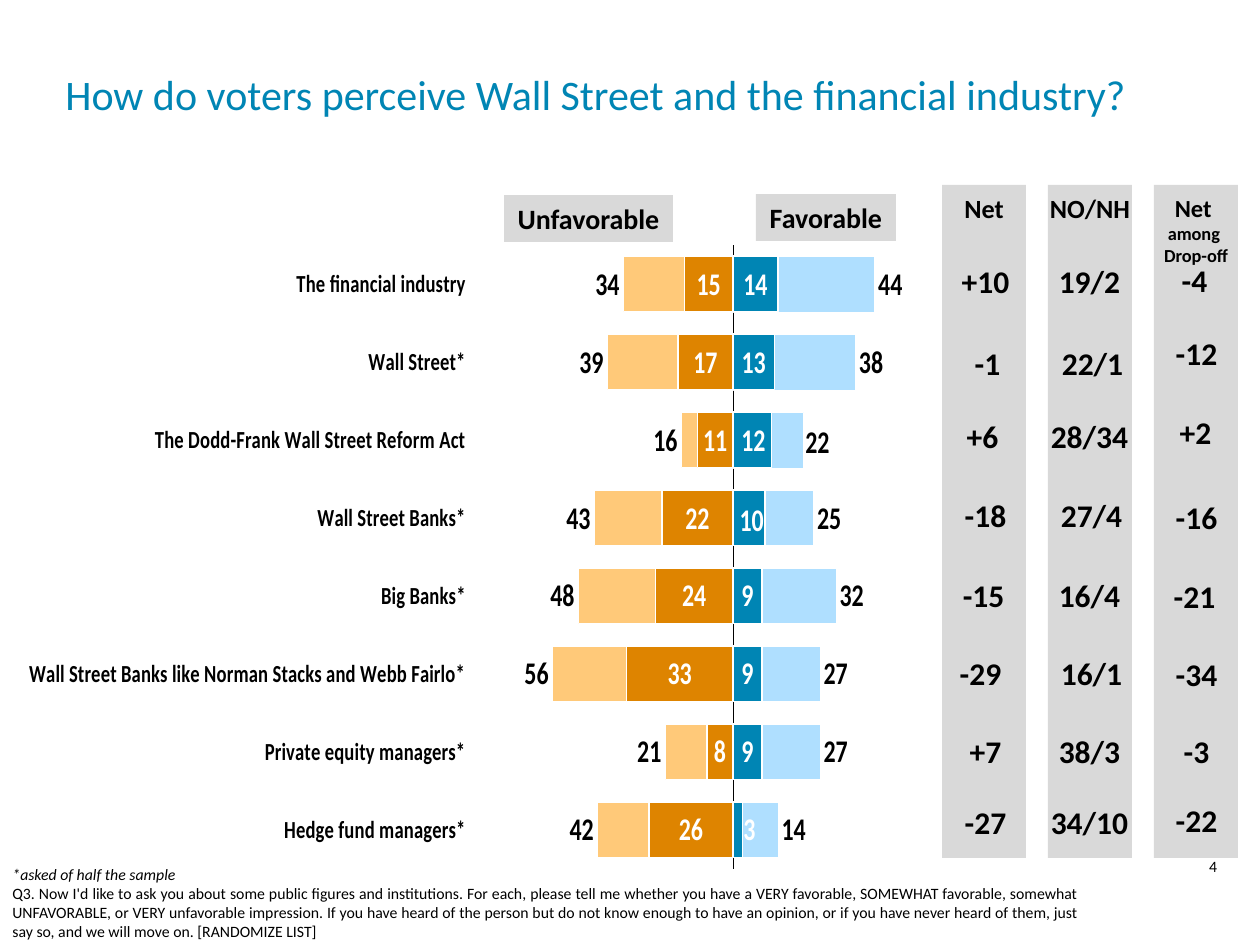
import copy
from dataclasses import dataclass

import pptx
import pptx.chart.data
import pptx.dml.color
import pptx.enum.chart
import pptx.enum.shapes
import pptx.enum.text
import pptx.oxml
import pptx.oxml.ns
import pptx.util

EMU_PER_PX = 914400 / 126
FONT = "Calibri"
BLACK, WHITE, GREY, BLUE = "000000", "FFFFFF", "D9D9D9", "0085B4"
CENTER = pptx.enum.text.PP_ALIGN.CENTER
JUSTIFY = pptx.enum.text.PP_ALIGN.JUSTIFY
FLIP_SIGN = "#,##0_);#,##0"
LABEL_POSITION = pptx.enum.chart.XL_LABEL_POSITION
ROW_TOPS = (262, 344, 417, 496, 576, 654, 732, 803)
DROP_OFF_TOPS = (261, 334, 413, 498, 577, 655, 732, 801)


@dataclass
class Line:
    text: str
    size: float
    bold: bool = False
    italic: bool = False
    color: str = BLACK


@dataclass
class Column:
    left: int
    header: list[Line]
    header_top: int
    values: list[str]
    nudges: tuple[int, ...]
    tops: tuple[int, ...] = ROW_TOPS


@dataclass
class Bars:
    name: str
    values: list[int]
    color: str
    line_width: float
    label_color: str
    label_format: str
    position: object
    label_shifts: dict[int, tuple[float, float]]


CATEGORIES = [
    "The financial industry", "Wall Street*", "The Dodd-Frank Wall Street Reform Act",
    "Wall Street Banks*", "Big Banks*",
    "Wall Street Banks like Norman Stacks and Webb Fairlo*",
    "Private equity managers*", "Hedge fund managers*",
]
OUTSIDE, MIDDLE = LABEL_POSITION.OUTSIDE_END, LABEL_POSITION.CENTER
BARS = [
    Bars("Series 1", [44, 38, 22, 25, 32, 27, 27, 14], "AFDFFF", 0.25, BLACK, "General",
         OUTSIDE, {2: (-0.003, 0.003)}),
    Bars("Series 2", [-34, -39, -16, -43, -48, -56, -21, -42], "FFC979", 1.05, BLACK,
         FLIP_SIGN, OUTSIDE, {}),
    Bars("Series 3", [14, 13, 12, 10, 9, 9, 9, 3], BLUE, 1.05, WHITE, "General",
         MIDDLE, {2: (0.002, 0), 3: (0.004, 0.004), 7: (0.017, 0)}),
    Bars("Series 4", [-15, -17, -11, -22, -24, -33, -8, -26], "DE8400", 1.05, WHITE,
         FLIP_SIGN, MIDDLE, {}),
]
COLUMNS = [
    Column(1048, [Line("NO/NH", 15, True)], 192,
           ["19/2", "22/1", "28/34", "27/4", "16/4", "16/1", "38/3", "34/10"],
           (0, 3, 0, 2, 0, 2, 0, 0)),
    Column(942, [Line("Net", 15, True)], 192,
           ["+10", "-1", "+6", "-18", "-15", "-29", "+7", "-27"],
           (2, 4, -1, 2, 0, -3, 2, 2)),
    Column(1154, [Line("Net ", 14, True), Line("among ", 10.5, True),
                  Line("Drop-off", 10.5, True)], 193,
           ["-4", "-12", "+2", "-16", "-21", "-34", "-3", "-22"],
           (-1, 1, 0, 1, -1, 1, 1, 1), DROP_OFF_TOPS),
]


def px(length: float) -> int:
    return round(length * EMU_PER_PX)


def rgb(color: str) -> pptx.dml.color.RGBColor:
    return pptx.dml.color.RGBColor.from_string(color)


def style_font(font, size: float, color: str, bold: bool = False, italic: bool = False) -> None:
    font.name, font.size = FONT, pptx.util.Pt(size)
    font.bold, font.italic = bold, italic
    font.color.rgb = rgb(color)


def write(shape, lines: list[Line], align, inset: bool = True, wrap: bool = True,
          middle: bool = False) -> None:
    frame = shape.text_frame
    frame.word_wrap = wrap
    anchors = pptx.enum.text.MSO_ANCHOR
    frame.vertical_anchor = anchors.MIDDLE if middle else anchors.TOP
    if not inset:
        frame.margin_left = frame.margin_right = frame.margin_top = frame.margin_bottom = 0
    for index, line in enumerate(lines):
        paragraph = frame.add_paragraph() if index else frame.paragraphs[0]
        paragraph.alignment = align
        run = paragraph.add_run()
        run.text = line.text
        style_font(run.font, line.size, line.color, line.bold, line.italic)


def add_text(shapes, left: int, top: int, width: int, height: int, lines: list[Line],
             align=CENTER, **options) -> None:
    box = shapes.add_textbox(px(left), px(top), px(width), px(height))
    write(box, lines, align, **options)


def add_band(shapes, left: int, top: int, width: int, height: int):
    shape = shapes.add_shape(pptx.enum.shapes.MSO_SHAPE.RECTANGLE,
                             px(left), px(top), px(width), px(height))
    shape.shadow.inherit = False
    shape.fill.solid()
    shape.fill.fore_color.rgb = rgb(GREY)
    shape.line.fill.background()
    return shape


def add_column(slide, column: Column) -> None:
    shapes = slide.shapes.add_group_shape().shapes
    add_band(shapes, column.left, 185, 84, 673)
    add_text(shapes, column.left, column.header_top, 84, 37 * len(column.header),
             column.header, inset=False)
    for value, nudge, top in zip(column.values, column.nudges, column.tops):
        add_text(shapes, column.left + nudge, top, 83, 43, [Line(value, 18, True)], inset=False)


def layout_xml(**parts):
    body = "".join(f'<c:{name} val="{value}"/>' for name, value in parts.items())
    return pptx.oxml.parse_xml(f'<c:layout {pptx.oxml.ns.nsdecls("c")}>'
                               f"<c:manualLayout>{body}</c:manualLayout></c:layout>")


def style_bars(series, bars: Bars) -> None:
    series.format.fill.solid()
    series.format.fill.fore_color.rgb = rgb(bars.color)
    series.format.line.color.rgb = rgb(WHITE)
    series.format.line.width = pptx.util.Pt(bars.line_width)
    labels = series.data_labels
    labels.show_value = True
    labels.number_format, labels.number_format_is_linked = bars.label_format, False
    labels.position = bars.position
    style_font(labels.font, 18, bars.label_color, True)
    for index, (x, y) in bars.label_shifts.items():
        label = series.points[index].data_label
        style_font(label.font, 18, bars.label_color, True)
        label.position = bars.position
        element = labels._element.xpath(f"c:dLbl[c:idx/@val={index}]")[0]
        element.insert(1, layout_xml(x=x, y=y))


def move_to_second_axes(chart, first_moved: int) -> None:
    plot_area = chart._chartSpace.xpath("c:chart/c:plotArea")[0]
    primary = plot_area.xpath("c:barChart")[0]
    secondary = copy.deepcopy(primary)
    for index, series in enumerate(primary.xpath("c:ser")):
        owner = primary if index >= first_moved else secondary
        owner.remove(series if owner is primary else secondary.xpath("c:ser")[0])
    primary.addnext(secondary)
    axes = [copy.deepcopy(axis) for axis in plot_area.xpath("c:catAx | c:valAx")]
    for axis in axes:
        plot_area.xpath("c:catAx | c:valAx")[-1].addnext(axis)
        axis.xpath("c:delete")[0].set("val", "1")
    new_ids = {}
    for part in [secondary, *axes]:
        for reference in part.xpath("c:axId | c:crossAx"):
            new_id = new_ids.setdefault(reference.get("val"), str(5001 + len(new_ids)))
            reference.set("val", new_id)


def add_rating_chart(slide) -> None:
    data = pptx.chart.data.CategoryChartData()
    data.categories = CATEGORIES
    for bars in BARS:
        data.add_series(bars.name, bars.values)
    chart = slide.shapes.add_chart(pptx.enum.chart.XL_CHART_TYPE.BAR_CLUSTERED,
                                   px(29), px(154), px(913), px(728), data).chart
    chart.has_legend = chart.has_title = False
    chart.font.name, chart.font.size = "Arial", pptx.util.Pt(11)
    chart.font.color.rgb = rgb(BLACK)
    plot = chart.plots[0]
    plot.gap_width, plot.overlap, plot.vary_by_categories = 40, 100, False
    for series, bars in zip(plot.series, BARS):
        style_bars(series, bars)
    # Axes
    category_axis, value_axis = chart.category_axis, chart.value_axis
    category_axis.reverse_order = True
    category_axis.major_tick_mark = pptx.enum.chart.XL_TICK_MARK.NONE
    category_axis.tick_label_position = pptx.enum.chart.XL_TICK_LABEL_POSITION.LOW
    category_axis.format.line.color.rgb = rgb(BLACK)
    category_axis.format.line.width = pptx.util.Pt(0.25)
    style_font(category_axis.tick_labels.font, 14, BLACK, True)
    value_axis.minimum_scale, value_axis.maximum_scale = -80, 60
    value_axis.has_major_gridlines = value_axis.visible = False
    move_to_second_axes(chart, 2)
    # Plot area
    plot_area = chart._chartSpace.xpath("c:chart/c:plotArea")[0]
    for layout in plot_area.xpath("c:layout"):
        plot_area.remove(layout)
    plot_area.insert(0, layout_xml(layoutTarget="inner", xMode="edge", yMode="edge",
                                   x=0.327, y=0.125, w=0.65, h=0.857))


def main() -> None:
    presentation = pptx.Presentation()
    presentation.slide_width, presentation.slide_height = px(1260), px(945)
    slide = presentation.slides.add_slide(presentation.slide_layouts[6])
    # Title, page number and question wording
    add_text(slide.shapes, 53, 21, 1155, 146,
             [Line("How do voters perceive Wall Street and the financial industry?", 24, color=BLUE)],
             JUSTIFY, middle=True)
    add_text(slide.shapes, 1166, 851, 94, 42, [Line("4", 9)])
    question = ("Q3. Now I'd like to ask you about some public figures and institutions. For each, "
                "please tell me whether you have a VERY favorable, SOMEWHAT favorable, somewhat "
                "UNFAVORABLE, or VERY unfavorable impression. If you have heard of the person but "
                "do not know enough to have an opinion, or if you have never heard of them, just "
                "say so, and we will move on. [RANDOMIZE LIST]")
    add_text(slide.shapes, 0, 859, 1089, 89,
             [Line("*asked of half the sample", 9, italic=True), Line(question, 9)], JUSTIFY)
    # Chart and its side headings
    add_rating_chart(slide)
    for text, left, top, width in (("Unfavorable", 504, 195, 169), ("Favorable", 756, 194, 140)):
        write(add_band(slide.shapes, left, top, width, 47), [Line(text, 16, True)], CENTER,
              wrap=False, middle=True)
    # Score columns
    for column in COLUMNS:
        add_column(slide, column)
    presentation.save("out.pptx")


if __name__ == "__main__":
    main()
